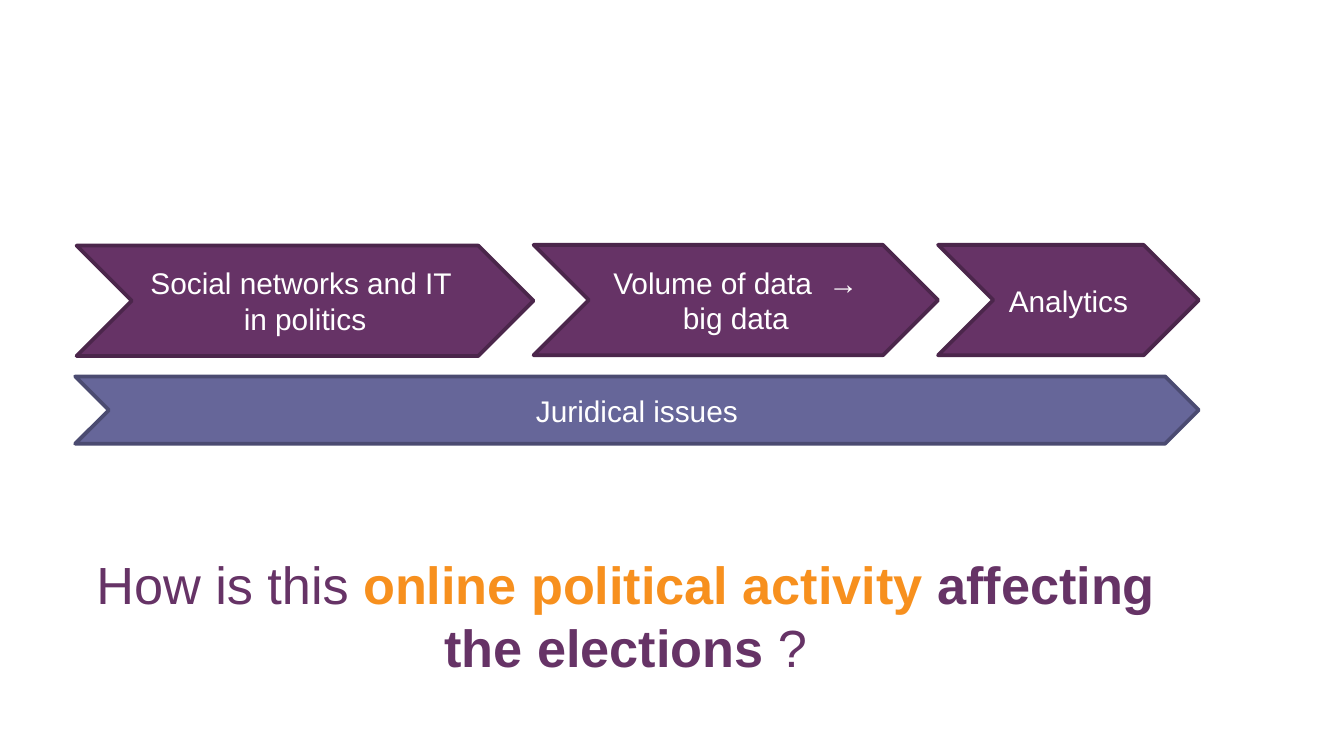
import dataclasses
import typing

import pptx
import pptx.dml.color
import pptx.enum.shapes
import pptx.enum.text
import pptx.util

Rgb = pptx.dml.color.RGBColor
WIDE = pptx.util.Inches(10)
HIGH = WIDE * 9 // 16


@dataclasses.dataclass(frozen=True)
class Theme:
    font: str = "Arial"
    plum: str = "663366"
    plum_edge: str = "4B264B"
    slate: str = "666699"
    slate_edge: str = "4B4B71"
    orange: str = "F7901E"
    white: str = "FFFFFF"
    title: int = 28
    label: int = 16
    edge: int = 2


class Box(typing.NamedTuple):
    """Place and size in hundredths of the slide's width and height."""
    col: float
    row: float
    cols: float
    rows: float


class Piece(typing.NamedTuple):
    text: str
    color: str
    bold: bool = False


@dataclasses.dataclass(frozen=True)
class Arrow:
    box: Box
    lines: tuple[str, ...]
    fill: str
    edge: str


THEME = Theme()


def scale(box: Box) -> tuple[int, int, int, int]:
    return (round(WIDE * box.col / 100), round(HIGH * box.row / 100),
            round(WIDE * box.cols / 100), round(HIGH * box.rows / 100))


def add_run(para, piece: Piece, size: int) -> None:
    run = para.add_run()
    run.text = piece.text
    run.font.name = THEME.font
    run.font.size = pptx.util.Pt(size)
    run.font.bold = piece.bold
    run.font.color.rgb = Rgb.from_string(piece.color)


def set_text(frame, lines: list[list[Piece]], size: int, anchor) -> None:
    frame.word_wrap = True
    frame.auto_size = pptx.enum.text.MSO_AUTO_SIZE.NONE
    frame.vertical_anchor = anchor
    for i, line in enumerate(lines):
        para = frame.add_paragraph() if i else frame.paragraphs[0]
        para.alignment = pptx.enum.text.PP_ALIGN.CENTER
        for piece in line:
            add_run(para, piece, size)


def draw_arrow(slide, arrow: Arrow) -> None:
    shape = slide.shapes.add_shape(
        pptx.enum.shapes.MSO_SHAPE.CHEVRON, *scale(arrow.box))
    shape.shadow.inherit = False
    shape.fill.solid()
    shape.fill.fore_color.rgb = Rgb.from_string(arrow.fill)
    shape.line.color.rgb = Rgb.from_string(arrow.edge)
    shape.line.width = pptx.util.Pt(THEME.edge)
    lines = [[Piece(text, THEME.white)] for text in arrow.lines]
    set_text(shape.text_frame, lines, THEME.label,
             pptx.enum.text.MSO_ANCHOR.MIDDLE)


def draw_title(slide, box: Box, pieces: list[Piece]) -> None:
    title = slide.shapes.title
    title.left, title.top, title.width, title.height = scale(box)
    set_text(title.text_frame, [pieces], THEME.title,
             pptx.enum.text.MSO_ANCHOR.BOTTOM)


def main() -> None:
    deck = pptx.Presentation()
    deck.slide_width, deck.slide_height = WIDE, HIGH
    slide = deck.slides.add_slide(deck.slide_layouts[5])

    # Closing question
    draw_title(slide, Box(3.95, 67.25, 85.2, 23.3), [
        Piece("How is this ", THEME.plum),
        Piece("online political activity", THEME.orange, True),
        Piece(" affecting the elections", THEME.plum, True),
        Piece(" ?", THEME.plum),
    ])

    # Steps, each starting where the last one ends
    steps = [
        (32.5, 34, ("Social networks and IT ", "in politics")),
        (32.4, 30.1, ("Volume of data  → big data",)),
        (32.4, 19.4, ("Analytics",)),
    ]
    col = 5.7
    for row, cols, lines in steps:
        draw_arrow(slide, Arrow(Box(col, row, cols, 14.6), lines,
                                THEME.plum, THEME.plum_edge))
        col += cols

    # Band below all steps
    left = 5.6
    draw_arrow(slide, Arrow(Box(left, 49.8, col - left, 8.9),
                            ("Juridical issues",),
                            THEME.slate, THEME.slate_edge))

    deck.save("out.pptx")


if __name__ == "__main__":
    main()
